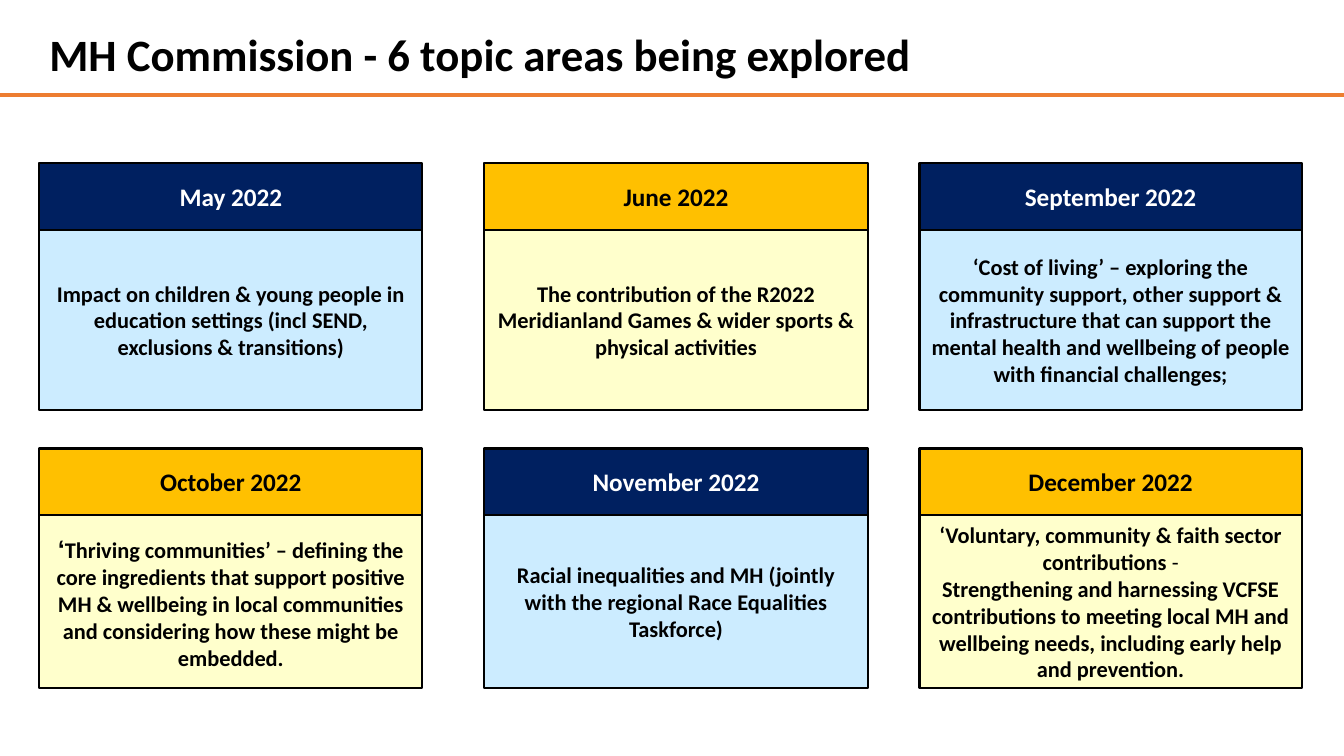
from collections import namedtuple
from dataclasses import dataclass

from lxml.etree import SubElement
from pptx import Presentation
from pptx.dml.color import RGBColor
from pptx.enum.shapes import MSO_CONNECTOR, MSO_SHAPE
from pptx.enum.text import MSO_ANCHOR, MSO_AUTO_SIZE, PP_ALIGN
from pptx.oxml.ns import qn
from pptx.util import Pt

EMU_PER_PX = 9144

Box = namedtuple("Box", "left top width height")
Palette = namedtuple("Palette", "header header_text body")
TextRun = namedtuple("TextRun", "text size font bold", defaults=(16, "Calibri", True))


@dataclass(frozen=True)
class Theme:
    black: str = "000000"
    rule: str = "ED7D31"
    palettes: tuple = (
        Palette("002060", "FFFFFF", "CCECFF"),
        Palette("FFC000", "000000", "FFFFCC"),
    )
    title_size: int = 32
    header_size: int = 18
    rule_width: float = 3
    border_width: float = 1.5


THEME = Theme()

SLIDE = Box(0, 0, 1333, 750)
TITLE = Box(39, 22, 1035, 64)
RULE_TOP = 94
HEADER_HEIGHT = 66
COLUMNS = ((39, 380), (480, 381), (912, 379))
ROWS = ((162, 245), (445, 238))

TOPICS = (
    ("May 2022", [[TextRun(
        "Impact on children & young people in education settings "
        "(incl SEND, exclusions & transitions)")]]),
    ("June 2022", [[TextRun(
        "The contribution of the R2022 Meridianland Games & wider sports "
        "& physical activities")]]),
    ("September 2022", [[TextRun(
        "‘Cost of living’ – exploring the community support, other support & "
        "infrastructure that can support the mental health and wellbeing of "
        "people with financial challenges;")]]),
    ("October 2022", [[
        TextRun("‘", 18, "Arial"),
        TextRun(
            "Thriving communities’ – defining the core ingredients that support "
            "positive MH & wellbeing in local communities and considering how "
            "these might be embedded.")]]),
    ("November 2022", [[TextRun(
        "Racial inequalities and MH (jointly with the regional Race Equalities "
        "Taskforce)")]]),
    ("December 2022", [
        [TextRun("‘Voluntary, community & faith sector contributions"),
         TextRun(" -", bold=False)],
        [TextRun(
            "Strengthening and harnessing VCFSE contributions to meeting local "
            "MH and wellbeing needs, including early help and prevention.")]]),
)


def to_emu(lengths):
    return [length * EMU_PER_PX for length in lengths]


def color(value):
    return RGBColor.from_string(value)


def write_text(frame, paragraphs, text_color, alignment):
    frame.word_wrap = True
    for index, text_runs in enumerate(paragraphs):
        paragraph = frame.add_paragraph() if index else frame.paragraphs[0]
        paragraph.alignment = alignment
        for text_run in text_runs:
            run = paragraph.add_run()
            run.text = text_run.text
            run.font.name = text_run.font
            run.font.size = Pt(text_run.size)
            run.font.bold = text_run.bold
            run.font.color.rgb = color(text_color)


def add_panel(slide, box, fill, paragraphs, text_color):
    shape = slide.shapes.add_shape(MSO_SHAPE.RECTANGLE, *to_emu(box))
    shape.shadow.inherit = False
    shape.fill.solid()
    shape.fill.fore_color.rgb = color(fill)
    shape.line.color.rgb = color(THEME.black)
    shape.line.width = Pt(THEME.border_width)
    shape.text_frame.vertical_anchor = MSO_ANCHOR.MIDDLE
    write_text(shape.text_frame, paragraphs, text_color, PP_ALIGN.CENTER)


def add_title(slide, box):
    frame = slide.shapes.add_textbox(*to_emu(box)).text_frame
    frame.auto_size = MSO_AUTO_SIZE.SHAPE_TO_FIT_TEXT
    heading = TextRun("MH Commission - 6 topic areas being explored", THEME.title_size)
    write_text(frame, [[heading]], THEME.black, PP_ALIGN.LEFT)


def add_rule(slide, box):
    ends = to_emu((box.left, box.top, box.left + box.width, box.top + box.height))
    connector = slide.shapes.add_connector(MSO_CONNECTOR.STRAIGHT, *ends)
    connector.line.color.rgb = color(THEME.rule)
    connector.line.width = Pt(THEME.rule_width)
    SubElement(connector._element.spPr, qn("a:effectLst"))


def add_topic_card(slide, box, month, paragraphs, palette):
    header = box._replace(height=HEADER_HEIGHT)
    body = box._replace(top=box.top + HEADER_HEIGHT, height=box.height - HEADER_HEIGHT)
    add_panel(slide, body, palette.body, paragraphs, THEME.black)
    heading = TextRun(month, THEME.header_size)
    add_panel(slide, header, palette.header, [[heading]], palette.header_text)


def add_topic_grid(slide):
    for index, (month, paragraphs) in enumerate(TOPICS):
        row, column = divmod(index, len(COLUMNS))
        left, width = COLUMNS[column]
        top, height = ROWS[row]
        palette = THEME.palettes[index % len(THEME.palettes)]
        add_topic_card(slide, Box(left, top, width, height), month, paragraphs, palette)


def main():
    presentation = Presentation()
    presentation.slide_width, presentation.slide_height = to_emu(SLIDE[2:])
    slide = presentation.slides.add_slide(presentation.slide_layouts[6])
    add_rule(slide, Box(0, RULE_TOP, SLIDE.width, 0))
    add_title(slide, TITLE)
    add_topic_grid(slide)
    presentation.save("out.pptx")


if __name__ == "__main__":
    main()
